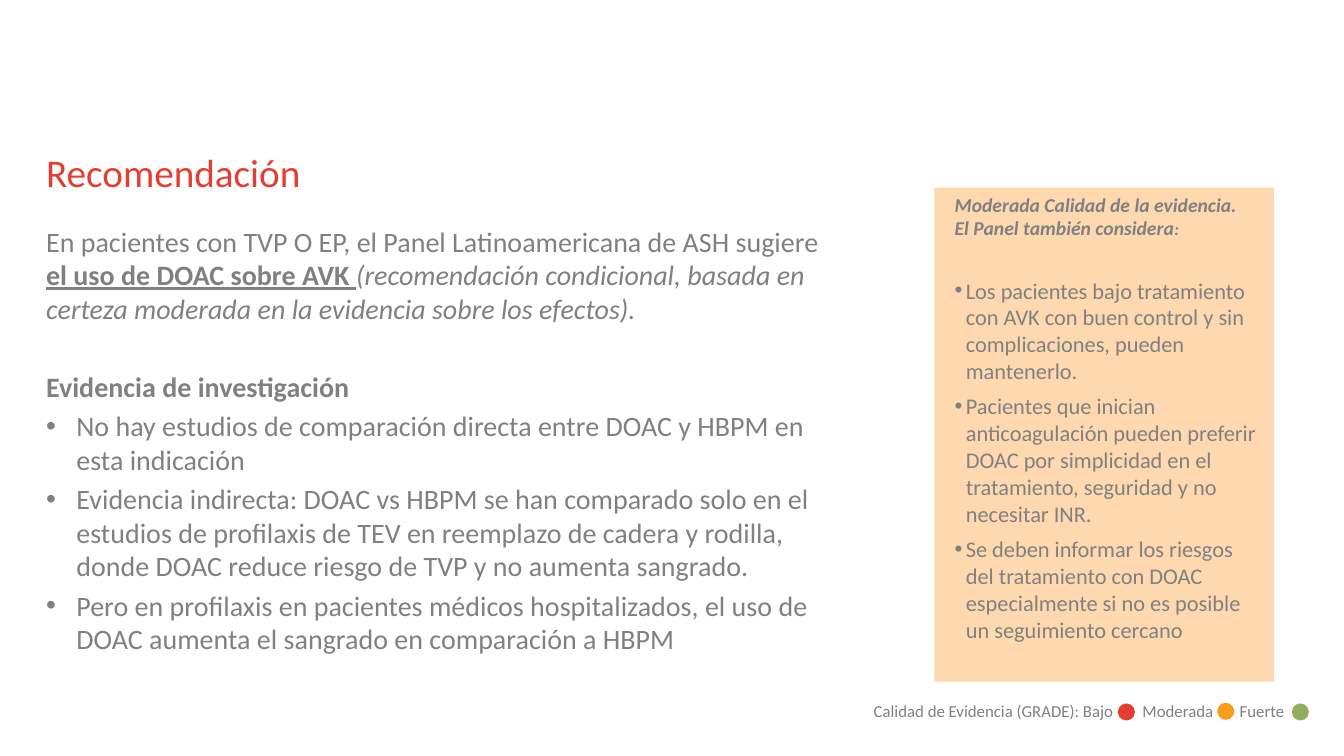
from lxml import etree
from pptx import Presentation
from pptx.dml.color import RGBColor
from pptx.enum.shapes import MSO_SHAPE
from pptx.enum.text import MSO_ANCHOR, MSO_AUTO_SIZE, PP_ALIGN
from pptx.oxml.ns import qn
from pptx.util import Pt

RECT, OVAL = MSO_SHAPE.RECTANGLE, MSO_SHAPE.OVAL
TOP, LEFT, NO_FIT = MSO_ANCHOR.TOP, PP_ALIGN.LEFT, MSO_AUTO_SIZE.NONE
COLORS = {"text": "808080", "title": "E53E31", "panel": "FED9B0",
          "low": "E43E32", "moderate": "F99D1C", "strong": "91AF5F"}


class SlideBuilder:
    font = "Calibri"

    def __init__(self, prs):
        self.s = prs.slides.add_slide(prs.slide_layouts[5])

    def place(self, sp, box):
        for name, value in zip(("left", "top", "width", "height"), box):
            setattr(sp, name, Pt(value))

    def frame(self, sp, insets):
        tf = sp.text_frame
        values = {"word_wrap": True, "auto_size": NO_FIT, "vertical_anchor": TOP}
        sides = ("left", "top", "right", "bottom")
        values.update({f"margin_{k}": Pt(v) for k, v in zip(sides, insets)})
        for name, value in values.items():
            setattr(tf, name, value)
        return tf

    def paragraph(self, tf, runs, size, color="text", before=0, after=0, bullet=0, tabs=()):
        """Add runs of (text, font values); bullet is the hanging indent."""
        p = tf.paragraphs[0] if not tf.paragraphs[0].runs else tf.add_paragraph()
        pPr = p._p.get_or_add_pPr()
        if bullet:
            pPr.set("marL", str(Pt(bullet)))
            pPr.set("indent", str(-Pt(bullet)))
            etree.SubElement(pPr, qn("a:buFont"), typeface="Arial")
            etree.SubElement(pPr, qn("a:buChar"), char="•")
        if tabs:
            tab_list = etree.SubElement(pPr, qn("a:tabLst"))
            for pos in tabs:
                etree.SubElement(tab_list, qn("a:tab"), pos=str(Pt(pos)), algn="l")
        p.alignment, p.space_before, p.space_after = LEFT, Pt(before), Pt(after)
        for text, style in runs:
            r = p.add_run()
            r.text = text
            r.font.color.rgb = RGBColor.from_string(COLORS[color])
            for name, value in {"name": self.font, "size": Pt(size), **style}.items():
                setattr(r.font, name, value)

    def title(self, text, box):
        sp = self.s.shapes.title
        self.place(sp, box)
        self.paragraph(self.frame(sp, (0, 0, 7.2, 3.6)), [(text, {})], 28, "title")

    def text_box(self, box, insets):
        return self.frame(self.s.shapes.add_textbox(*map(Pt, box)), insets)

    def shape(self, kind, box, color):
        sp = self.s.shapes.add_shape(kind, *map(Pt, box))
        sp.shadow.inherit = False
        sp.fill.solid()
        sp.fill.fore_color.rgb = RGBColor.from_string(COLORS[color])
        sp.line.fill.background()
        return sp


def add_panel(b):
    sp = b.shape(RECT, (667.5, 134, 242.5, 353), "panel")
    tf = b.frame(sp, (14.4, 3.6, 7.2, 3.6))
    strong = {"bold": True, "italic": True}
    b.paragraph(tf, [("Moderada Calidad de la evidencia.", strong)], 14)
    b.paragraph(tf, [("El Panel también considera", strong),
                     (":", {**strong, "size": Pt(12)})], 14, after=6)
    points = (
        "Los pacientes bajo tratamiento con AVK con buen control y sin complicaciones, pueden mantenerlo.",
        "Pacientes que inician anticoagulación pueden preferir DOAC por simplicidad en el tratamiento, "
        "seguridad y no necesitar INR.",
        "Se deben informar los riesgos del tratamiento con DOAC especialmente si no es posible "
        "un seguimiento cercano",
    )
    for i, text in enumerate(points):
        b.paragraph(tf, [(text, {})], 16, before=0 if i else 20.5, after=6, bullet=8)


def add_legend(b):
    tf = b.text_box((617, 497, 343, 21.6), (7.2, 3.6, 7.2, 3.6))
    b.paragraph(tf, [("Calidad de Evidencia (GRADE): Bajo\tModerada\tFuerte", {})], 12,
                tabs=(192, 261.5))
    for x, y, color in ((798.5, 502.5, "low"), (869.5, 502, "moderate"), (922.75, 502.5, "strong")):
        b.shape(OVAL, (x, y, 12.2, 12.2), color)


def add_body(b):
    tf = b.text_box((33, 160, 554.5, 320.5), (0, 0, 0, 0))
    b.paragraph(tf, [
        ("En pacientes con TVP O EP, el Panel Latinoamericana de ASH sugiere ", {}),
        ("el uso de DOAC sobre AVK ", {"bold": True, "underline": True}),
        ("(recomendación condicional, basada en certeza moderada en la evidencia sobre los efectos).",
         {"italic": True}),
    ], 20)
    b.paragraph(tf, [("Evidencia de investigación", {"bold": True})], 20, before=32)
    for text in (
        "No hay estudios de comparación directa entre DOAC y HBPM en esta indicación",
        "Evidencia indirecta: DOAC vs HBPM se han comparado solo en el estudios de profilaxis de TEV "
        "en reemplazo de cadera y rodilla, donde DOAC reduce riesgo de TVP y no aumenta sangrado.",
        "Pero en profilaxis en pacientes médicos hospitalizados, el uso de DOAC aumenta el sangrado "
        "en comparación a HBPM",
    ):
        b.paragraph(tf, [(text, {})], 20, before=4, bullet=21.6)


def main():
    prs = Presentation()
    prs.slide_width, prs.slide_height = Pt(960), Pt(540)
    b = SlideBuilder(prs)
    add_panel(b)
    add_legend(b)
    b.title("Recomendación", (33, 106, 864, 56))
    add_body(b)
    prs.save("out.pptx")


if __name__ == "__main__":
    main()
